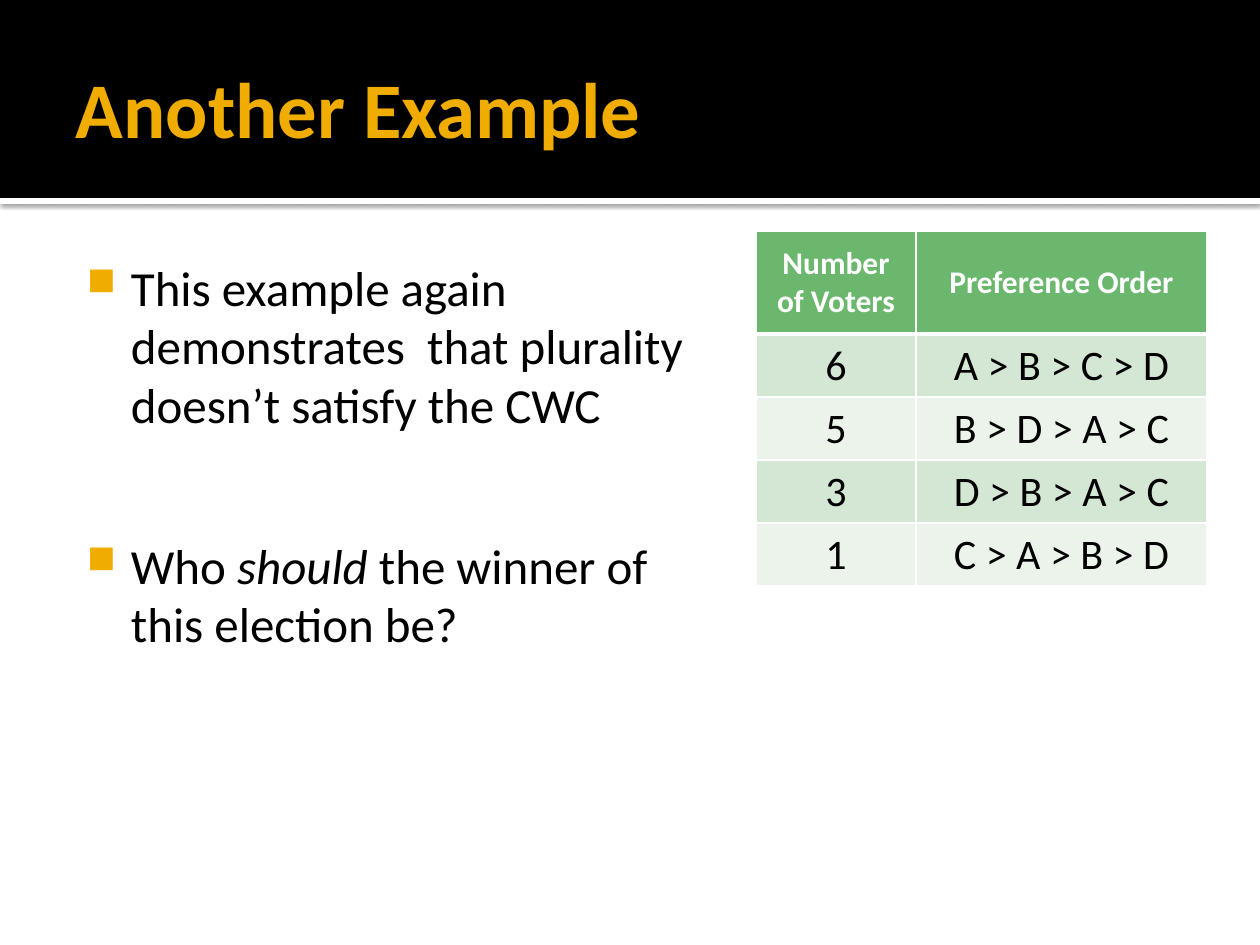
from lxml import etree
from pptx import Presentation
from pptx import util as u
from pptx.dml.color import RGBColor
from pptx.enum import shapes, text
from pptx.oxml import ns

PX = 914400 / 126
FONT = "Calibri"
BLACK = RGBColor(0x00, 0x00, 0x00)
WHITE = RGBColor(0xFF, 0xFF, 0xFF)
GOLD = RGBColor(0xF0, 0xAD, 0x00)
GREEN = RGBColor(0x6B, 0xB7, 0x6D)
BANDS = RGBColor(0xD4, 0xE6, 0xD4), RGBColor(0xEB, 0xF3, 0xEB)

HEADS = "Number of Voters", "Preference Order"
VOTES = [
    ("6", "A > B > C > D"),
    ("5", "B > D > A > C"),
    ("3", "D > B > A > C"),
    ("1", "C > A > B > D"),
]


def px(n):
    return u.Emu(round(n * PX))


def sub(node, tag, **attrs):
    child = etree.SubElement(node, ns.qn(tag))
    for key, value in attrs.items():
        child.set(key, str(value))
    return child


def style(font, size, color, bold=False):
    font.name, font.size, font.bold = FONT, u.Pt(size), bold
    font.color.rgb = color


def add_bar(slide, top, height, color):
    bar = slide.shapes.add_shape(
        shapes.MSO_SHAPE.RECTANGLE, 0, px(top), px(1260), px(height))
    bar.shadow.inherit = False
    bar.fill.solid()
    bar.fill.fore_color.rgb = color
    bar.line.fill.background()
    return bar


def add_shadow(shape):
    effects = shape._element.spPr.find(ns.qn("a:effectLst"))
    shadow = sub(effects, "a:outerShdw", blurRad=u.Pt(2.5), dist=u.Pt(0.8),
                 dir=90 * 60000, algn="t", rotWithShape=0)
    color = sub(shadow, "a:srgbClr", val=BLACK)
    sub(color, "a:alpha", val=60000)


def add_box(slide, box, insets, anchor):
    frame = slide.shapes.add_textbox(*map(px, box)).text_frame
    frame.word_wrap = True
    frame.vertical_anchor = anchor
    (frame.margin_left, frame.margin_top,
     frame.margin_right, frame.margin_bottom) = map(px, insets)
    return frame


def add_bullet(para, *parts):
    """Each part is (words, italic)."""
    style(para.font, 28, BLACK)
    para.space_after = u.Pt(12)
    for words, italic in parts:
        run = para.add_run()
        run.text = words
        if italic:
            run.font.italic = True
    props = para._p.get_or_add_pPr()
    props.set("marL", str(px(60)))
    props.set("indent", str(px(-44)))
    marks = [etree.Element(ns.qn(tag)) for tag in
             ("a:buClr", "a:buSzPct", "a:buChar")]
    sub(marks[0], "a:srgbClr", val=GOLD)
    marks[1].set("val", "80000")
    marks[2].set("char", "■")
    # Bullet settings come before the default run settings
    for mark in marks:
        props.find(ns.qn("a:defRPr")).addprevious(mark)


def fill_cell(cell, words, size, color, fill, bold=False, base=1):
    cell.text = words
    cell.vertical_anchor = text.MSO_ANCHOR.MIDDLE
    para = cell.text_frame.paragraphs[0]
    para.alignment = text.PP_ALIGN.CENTER
    style(para.font, size, color, bold)
    props = cell._tc.get_or_add_tcPr()
    for side, width in zip("LRTB", (1, 1, 1, base)):
        line = sub(props, "a:ln" + side, w=u.Pt(width))
        sub(sub(line, "a:solidFill"), "a:srgbClr", val=WHITE)
    cell.fill.solid()
    cell.fill.fore_color.rgb = fill


def add_votes(slide):
    table = slide.shapes.add_table(
        len(VOTES) + 1, 2, px(756), px(231), px(451), px(355)).table
    for col, width in zip(table.columns, (160, 291)):
        col.width = px(width)
    for i, row in enumerate(table.rows):
        row.height = px(60 if i else 103)
    for c, words in enumerate(HEADS):
        fill_cell(table.cell(0, c), words, 18, WHITE, GREEN, True, 3)
    for r, vote in enumerate(VOTES):
        for c, words in enumerate(vote):
            # Header borders win on the shared edge
            fill_cell(table.cell(r + 1, c), words, 24, BLACK, BANDS[r % 2])
            if r == 0:
                top = table.cell(1, c)._tc.tcPr.find(ns.qn("a:lnT"))
                top.set("w", str(u.Pt(3)))


def main():
    deck = Presentation()
    deck.slide_width, deck.slide_height = px(1260), px(945)
    slide = deck.slides.add_slide(deck.slide_layouts[6])

    # Header band with a shaded white edge
    add_shadow(add_bar(slide, 198, 6, WHITE))
    add_bar(slide, 0, 198, BLACK)

    # Title
    frame = add_box(slide, (63, 21, 1134, 173), (13, 6, 6, 6),
                    text.MSO_ANCHOR.MIDDLE)
    title = frame.paragraphs[0]
    title.text = "Another Example"
    style(title.font, 45, GOLD, True)

    # Preference table
    add_votes(slide)

    # Bullets
    frame = add_box(slide, (63, 244, 640, 648), (8, 13, 13, 6),
                    text.MSO_ANCHOR.TOP)
    add_bullet(frame.paragraphs[0], (
        "This example again demonstrates  that plurality "
        "doesn’t satisfy the CWC", False))
    ask = frame.add_paragraph()
    ask.space_before = u.Pt(46)
    add_bullet(ask, ("Who ", False), ("should", True),
               (" the winner of this election be?", False))

    deck.save("out.pptx")


if __name__ == "__main__":
    main()
